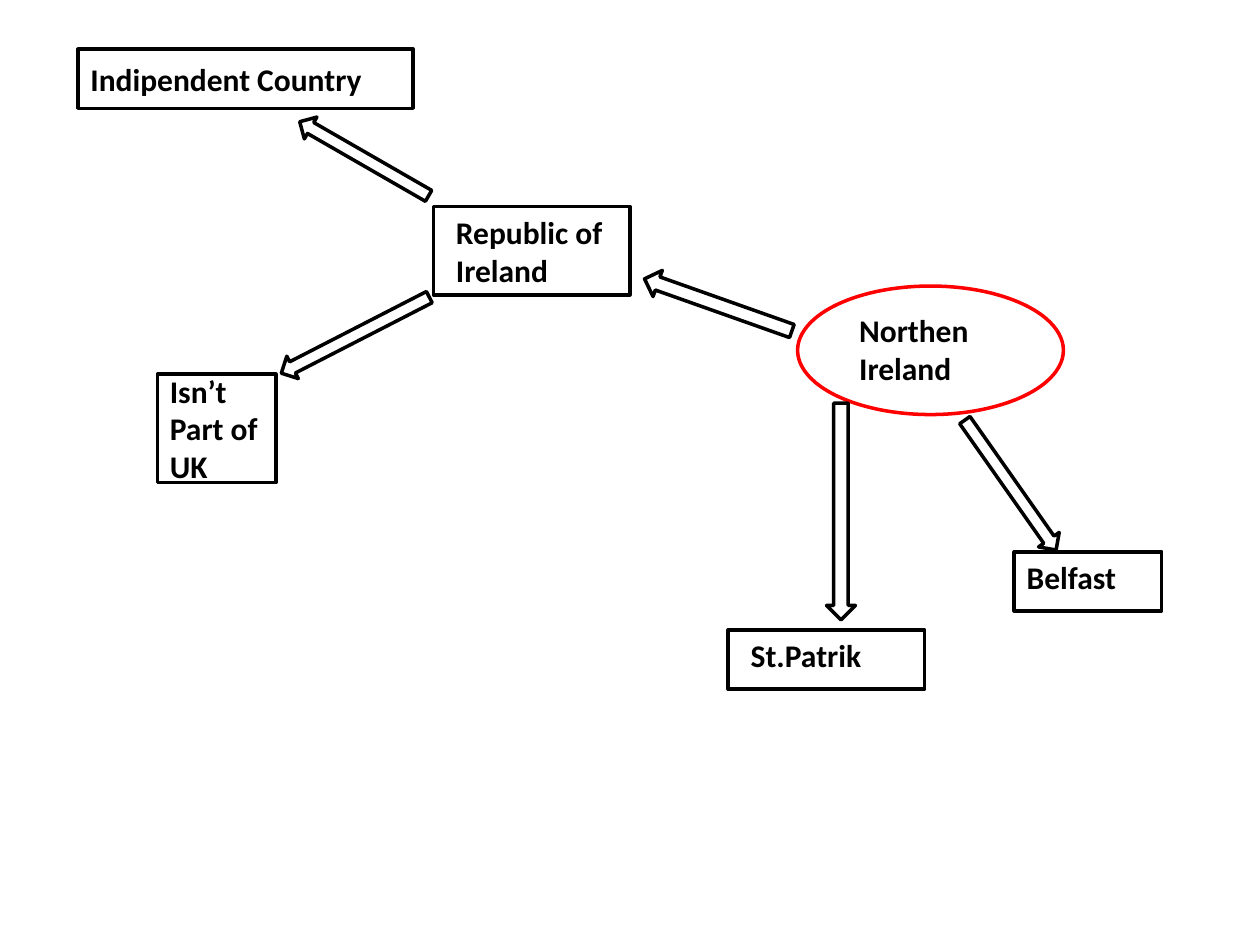
from pptx import Presentation
from pptx.dml.color import RGBColor
from pptx.enum.shapes import MSO_SHAPE as Shape
from pptx.enum.text import MSO_ANCHOR as Anchor, MSO_AUTO_SIZE as AutoSize, PP_ALIGN as Align
from pptx.util import Inches, Pt

BLACK = RGBColor(0, 0, 0)
WHITE = RGBColor(255, 255, 255)
RED = RGBColor(255, 0, 0)
LABEL_FONT = {"name": "Calibri", "size": Pt(18), "bold": True}


def add_outline(slide, kind, bounds, color=BLACK, rotation=0):
    shape = slide.shapes.add_shape(kind, *map(Inches, bounds))
    shape.shadow.inherit = False
    shape.fill.solid()
    shape.fill.fore_color.rgb = WHITE
    shape.line.color.rgb = color
    shape.line.width = Pt(2)
    shape.rotation = rotation
    return shape


def write_lines(shape, lines, anchor):
    """Fill a shape with one left-aligned paragraph per line."""
    frame = shape.text_frame
    frame.word_wrap = True
    frame.vertical_anchor = anchor
    frame.text = "\n".join(lines)
    for para in frame.paragraphs:
        para.alignment = Align.LEFT
        for name, value in LABEL_FONT.items():
            setattr(para.font, name, value)
        para.font.color.rgb = BLACK


def add_label(slide, bounds, *lines):
    box = slide.shapes.add_textbox(*map(Inches, bounds))
    write_lines(box, lines, Anchor.TOP)
    box.text_frame.auto_size = AutoSize.SHAPE_TO_FIT_TEXT


def add_text_box(slide, bounds, *lines):
    """Add an outlined rectangle that holds its own text."""
    box = add_outline(slide, Shape.RECTANGLE, bounds)
    write_lines(box, lines, Anchor.MIDDLE)


def add_arrow(slide, bounds, rotation):
    add_outline(slide, Shape.RIGHT_ARROW, bounds, rotation=rotation)


def main():
    deck = Presentation()
    deck.slide_width, deck.slide_height = Inches(10), Inches(7.5)
    slide = deck.slides.add_slide(deck.slide_layouts[6])

    add_outline(slide, Shape.OVAL, (6.33, 2.27, 2.11, 1.02), RED)
    add_label(slide, (6.72, 2.42, 1.72, 0.71), "Northen", "Ireland")

    add_outline(slide, Shape.DOWN_ARROW, (6.56, 3.2, 0.23, 1.72))
    add_outline(slide, Shape.RECTANGLE, (5.78, 5, 1.56, 0.47))
    add_label(slide, (5.86, 5, 1.56, 0.4), "St.Patrik")

    add_arrow(slide, (7.39, 3.75, 1.26, 0.2), 54.9)
    add_outline(slide, Shape.RECTANGLE, (8.05, 4.38, 1.17, 0.47))
    add_label(slide, (8.05, 4.38, 1.56, 0.4), "Belfast")

    add_arrow(slide, (5.08, 2.31, 1.24, 0.22), 199.5)
    add_outline(slide, Shape.RECTANGLE, (3.44, 1.64, 1.56, 0.7))
    add_label(slide, (3.52, 1.64, 1.48, 0.71), "Republic of", "Ireland")

    add_arrow(slide, (2.16, 2.56, 1.32, 0.2), 152.8)
    add_arrow(slide, (2.3, 1.16, 1.18, 0.2), 209.9)
    add_text_box(slide, (0.62, 0.39, 2.66, 0.47), "Indipendent Country")
    add_text_box(slide, (1.25, 2.97, 0.94, 0.86), "Isn’t", "Part of", "UK")

    deck.save("out.pptx")


if __name__ == "__main__":
    main()
